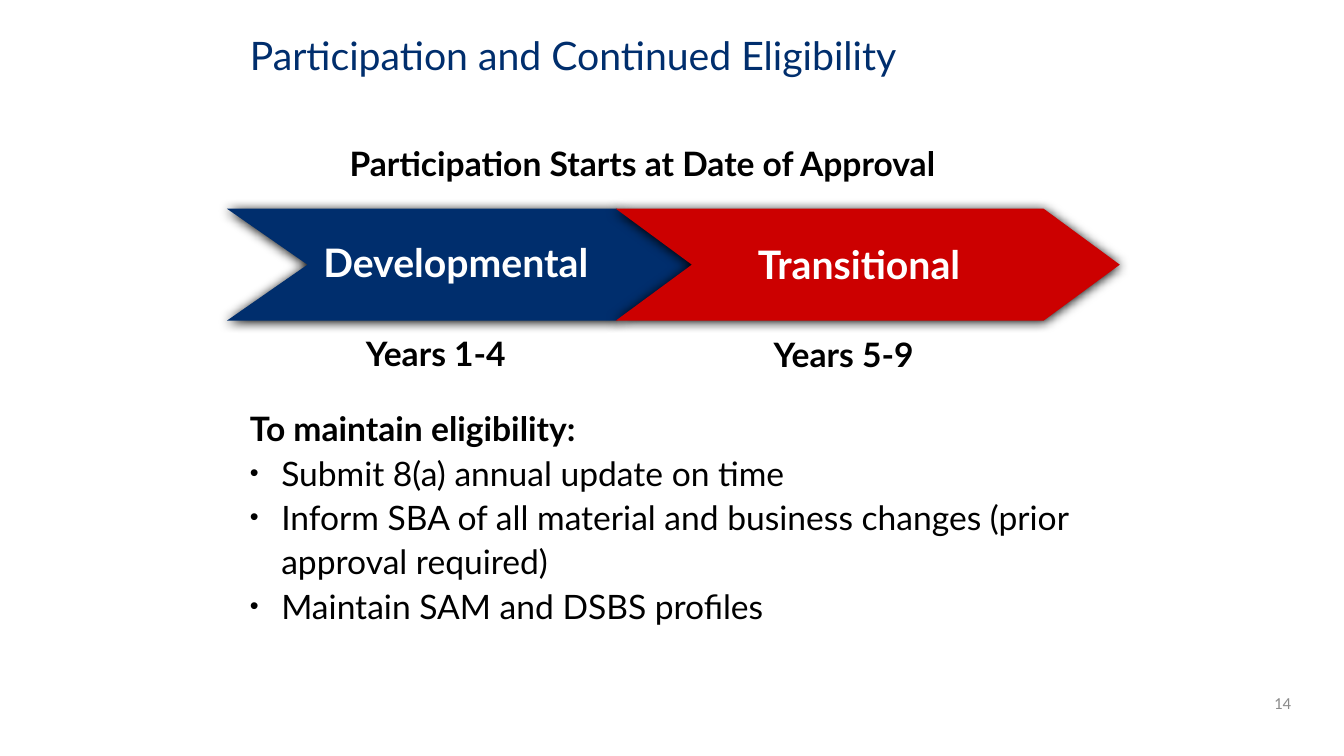
import pptx
import pptx.util
import pptx.dml.color
import pptx.enum.shapes
import pptx.enum.text
import pptx.oxml
import pptx.oxml.ns
import lxml.etree

Cm = pptx.util.Cm
Pt = pptx.util.Pt
RGBColor = pptx.dml.color.RGBColor
PP_ALIGN = pptx.enum.text.PP_ALIGN
MSO_ANCHOR = pptx.enum.text.MSO_ANCHOR
qn = pptx.oxml.ns.qn

NAVY = RGBColor(0x00, 0x2E, 0x6D)
RED = RGBColor(0xCC, 0x00, 0x00)
BLACK = RGBColor(0x00, 0x00, 0x00)
WHITE = RGBColor(0xFF, 0xFF, 0xFF)
GRAY = RGBColor(0x8C, 0x8C, 0x8C)

TITLE = {"name": "Lato", "size": Pt(28), "color": NAVY}
BODY = {"name": "Lato", "size": Pt(24), "color": BLACK}
HEADING = {**BODY, "bold": True}
PHASE = {**HEADING, "size": Pt(28), "color": WHITE}
NUMBER = {"name": "Calibri", "size": Pt(12), "color": GRAY}


def add_run(p, text, fmt):
    r = p.add_run()
    r.text = text
    for key, value in fmt.items():
        if key == "color":
            r.font.color.rgb = value
        else:
            setattr(r.font, key, value)


def add_text(s, box, text, fmt, anchor=MSO_ANCHOR.TOP):
    sp = s.shapes.add_textbox(*[Cm(v) for v in box])
    tf = sp.text_frame
    tf.word_wrap = True
    tf.vertical_anchor = anchor
    add_run(tf.paragraphs[0], text, fmt)
    return tf


prs = pptx.Presentation()
prs.slide_width = Cm(33.87)
prs.slide_height = Cm(19.05)
s = prs.slides.add_slide(prs.slide_layouts[6])

tf = add_text(s, (6.05, 0.64, 21.89, 1.65), "Participation and Continued Eligibility",
              TITLE, MSO_ANCHOR.MIDDLE)
tf.paragraphs[0].line_spacing = 0.9
tf = add_text(s, (25.17, 17.2, 7.62, 1.02), "14", NUMBER, MSO_ANCHOR.MIDDLE)
tf.paragraphs[0].alignment = PP_ALIGN.RIGHT
add_text(s, (8.56, 3.48, 16.74, 1.27), "Participation Starts at Date of Approval", HEADING)

phases = [
    (5.72, 11.86, 0.72, NAVY, "Developmental", (7.9, 5.87, 8.76, 1.45),
     "Years 1-4", (8.97, 8.26, 4.85, 1.27)),
    (15.52, 12.7, 0.68, RED, "Transitional", (18.85, 5.94, 8.13, 1.45),
     "Years 5-9", (19.25, 8.28, 4.39, 1.27)),
]
for left, width, point, color, phase, phase_box, years, years_box in phases:
    sp = s.shapes.add_shape(pptx.enum.shapes.MSO_SHAPE.CHEVRON,
                            Cm(left), Cm(5.26), Cm(width), Cm(2.82))
    sp.adjustments[0] = point
    sp.fill.solid()
    sp.fill.fore_color.rgb = color
    sp.line.fill.background()
    sp.shadow.inherit = False
    effects = sp._element.spPr.find(qn("a:effectLst"))
    shadow = lxml.etree.SubElement(effects, qn("a:outerShdw"), blurRad=str(Pt(8.5)),
                                   dist=str(Pt(1)), dir="5400000", rotWithShape="0")
    lxml.etree.SubElement(shadow, qn("a:srgbClr"), val=str(BLACK))
    add_text(s, phase_box, phase, PHASE)
    add_text(s, years_box, years, HEADING)

tf = add_text(s, (6.05, 10.06, 21.77, 6.86), "To maintain eligibility:", HEADING)
requirements = [
    "Submit 8(a) annual update on time",
    "Inform SBA of all material and business changes (prior approval required)",
    "Maintain SAM and DSBS profiles",
]
for requirement in requirements:
    p = tf.add_paragraph()
    pPr = p._p.get_or_add_pPr()
    pPr.set("marL", str(Cm(0.79)))
    pPr.set("indent", str(-Cm(0.79)))
    lxml.etree.SubElement(pPr, qn("a:buSzPct"), val="75000")
    lxml.etree.SubElement(pPr, qn("a:buFont"), typeface="Arial")
    lxml.etree.SubElement(pPr, qn("a:buChar"), char="•")
    add_run(p, requirement, BODY)
for p in tf.paragraphs:
    p.line_spacing = 1.1

prs.save("out.pptx")
